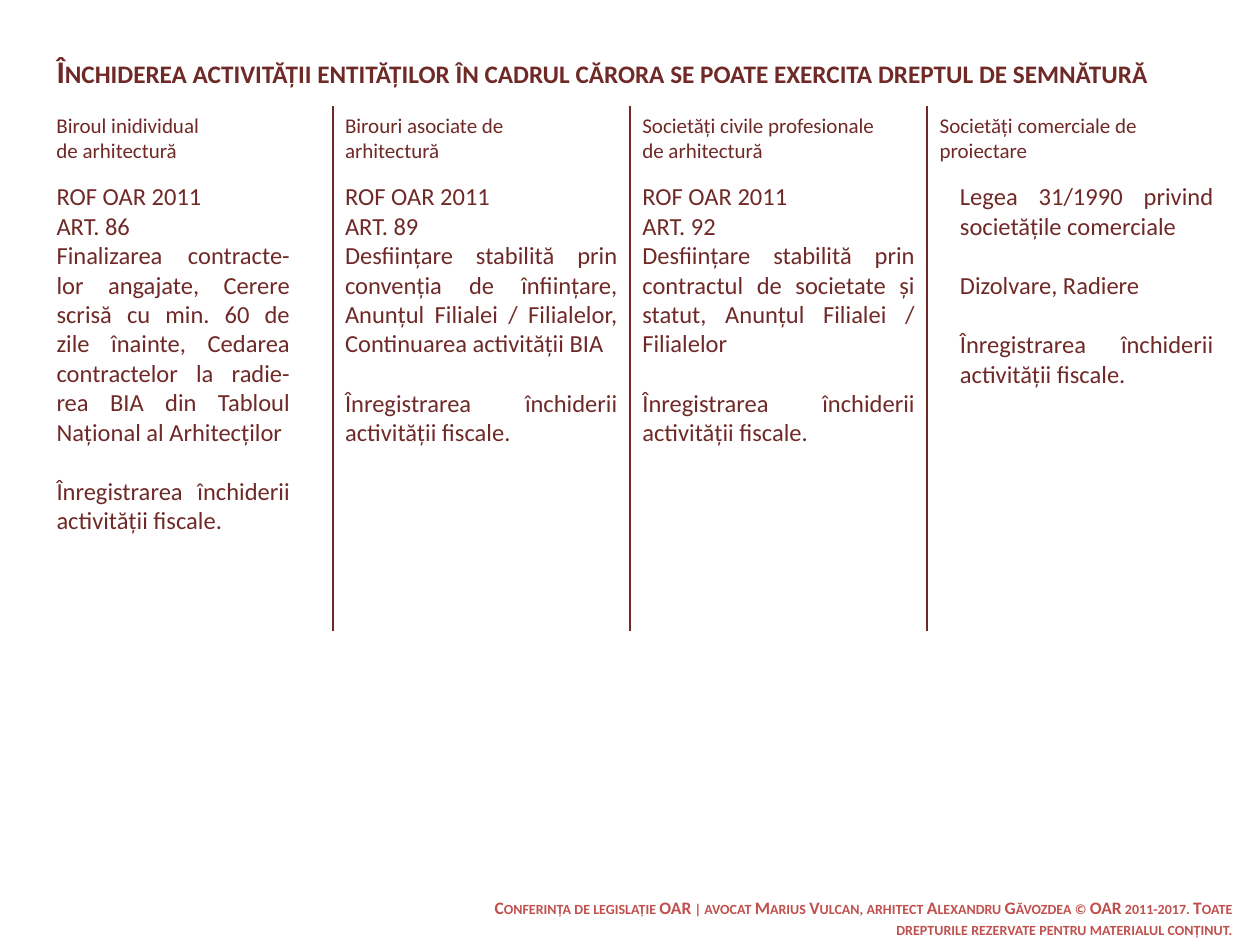
from dataclasses import dataclass

from lxml.etree import SubElement
from pptx import Presentation
from pptx.dml.color import RGBColor
from pptx.enum.shapes import MSO_CONNECTOR as Connector
from pptx.enum.text import MSO_ANCHOR as Anchor, PP_ALIGN as Align
from pptx.oxml.ns import qn
from pptx.slide import Slide
from pptx.util import Inches, Pt

COLORS = {"maroon": "6F2927", "red": "C0504D"}
FONT = "Calibri"
HEADING_TOP, BODY_TOP, DIVIDER_BOTTOM = 0.84, 1.39, 5.01
LEFT_MARGIN, FIRST_DIVIDER, COLUMN_WIDTH = 0.35, 2.64, 2.36
FISCAL_CLOSURE = "Înregistrarea închiderii activității fiscale."


@dataclass(frozen=True)
class Line:
    text: str
    gap_before: float = 0


@dataclass(frozen=True)
class Style:
    size: float
    color: str = "maroon"
    align: Align = Align.LEFT
    anchor: Anchor = Anchor.TOP
    bold: bool = False
    small_caps: bool = False


@dataclass(frozen=True)
class Entity:
    heading: str
    heading_width: float
    provisions: tuple[Line, ...]
    body_width: float = COLUMN_WIDTH
    body_height: float = 3.07
    body_indent: float = 0


TITLE = Style(18, bold=True, small_caps=True)
HEADING = Style(12)
BODY = Style(14, align=Align.JUSTIFY)
FOOTER = Style(10, "red", Align.RIGHT, Anchor.MIDDLE, True, True)
BLOCK_GAP = 17


def regulation(article: int, closure: str) -> tuple[Line, ...]:
    """Return the lines for an entity governed by the 2011 regulation."""
    return (Line("ROF OAR 2011"), Line(f"ART. {article}"), Line(closure),
            Line(FISCAL_CLOSURE, BLOCK_GAP))


ENTITIES = (
    Entity("Biroul inidividual de arhitectură", 1.5, regulation(
        86, "Finalizarea contracte-lor angajate, Cerere scrisă cu min. 60 de zile "
        "înainte, Cedarea contractelor la radie-rea BIA din Tabloul Național al "
        "Arhitecților"), body_width=2.05),
    Entity("Birouri asociate de arhitectură", 1.5, regulation(
        89, "Desființare stabilită prin convenția de înființare, Anunțul Filialei / "
        "Filialelor, Continuarea activității BIA")),
    Entity("Societăți civile profesionale de arhitectură", 2.13, regulation(
        92, "Desființare stabilită prin contractul de societate și statut, Anunțul "
        "Filialei / Filialelor"), body_height=3.39),
    Entity("Societăți comerciale de proiectare", 2.13, (
        Line("Legea 31/1990 privind societățile comerciale"),
        Line("Dizolvare, Radiere", BLOCK_GAP),
        Line(FISCAL_CLOSURE, BLOCK_GAP)), body_width=2.21, body_indent=0.16),
)


def add_text(slide: Slide, left: float, top: float, width: float, height: float,
             lines: tuple[Line, ...], style: Style) -> None:
    """Add a wrapped text box with one paragraph per line."""
    frame = slide.shapes.add_textbox(
        Inches(left), Inches(top), Inches(width), Inches(height)).text_frame
    frame.word_wrap = True
    frame.vertical_anchor = style.anchor
    for index, line in enumerate(lines):
        paragraph = frame.add_paragraph() if index else frame.paragraphs[0]
        paragraph.text = line.text
        paragraph.alignment = style.align
        paragraph.space_before = Pt(line.gap_before)
        font = paragraph.font
        font.name, font.size, font.bold = FONT, Pt(style.size), style.bold
        font.color.rgb = RGBColor.from_string(COLORS[style.color])
        if style.small_caps:
            font._element.set("cap", "small")


def add_divider(slide: Slide, x: float) -> None:
    """Add a vertical rule between two columns."""
    divider = slide.shapes.add_connector(
        Connector.STRAIGHT, Inches(x), Inches(HEADING_TOP), Inches(x), Inches(DIVIDER_BOTTOM))
    divider.line.color.rgb = RGBColor.from_string(COLORS["maroon"])
    divider.line.width = Pt(1.25)
    SubElement(divider._element.spPr, qn("a:effectLst"))


def add_entity(slide: Slide, index: int, entity: Entity) -> None:
    """Add one column with its heading, provisions and divider."""
    left = FIRST_DIVIDER + (index - 1) * COLUMN_WIDTH if index else LEFT_MARGIN
    if index:
        add_divider(slide, left)
    add_text(slide, left, HEADING_TOP, entity.heading_width, 0.39,
             (Line(entity.heading),), HEADING)
    add_text(slide, left + entity.body_indent, BODY_TOP, entity.body_width,
             entity.body_height, entity.provisions, BODY)


def main() -> None:
    """Build and save the slide."""
    presentation = Presentation()
    presentation.slide_width, presentation.slide_height = Inches(10), Inches(7.5)
    slide = presentation.slides.add_slide(presentation.slide_layouts[6])
    add_text(slide, LEFT_MARGIN, 0.36, 9.15, 0.39, (Line(
        "Închiderea activității entităților în cadrul cărora se poate exercita "
        "dreptul de semnătură"),), TITLE)
    for index, entity in enumerate(ENTITIES):
        add_entity(slide, index, entity)
    add_text(slide, 3.82, 7.19, 6.06, 0.19, (Line(
        "Conferința de legislație OAR | avocat Marius Vulcan, arhitect Alexandru "
        "Găvozdea © OAR 2011-2017. Toate drepturile rezervate pentru materialul "
        "conținut."),), FOOTER)
    presentation.save("out.pptx")


if __name__ == "__main__":
    main()
